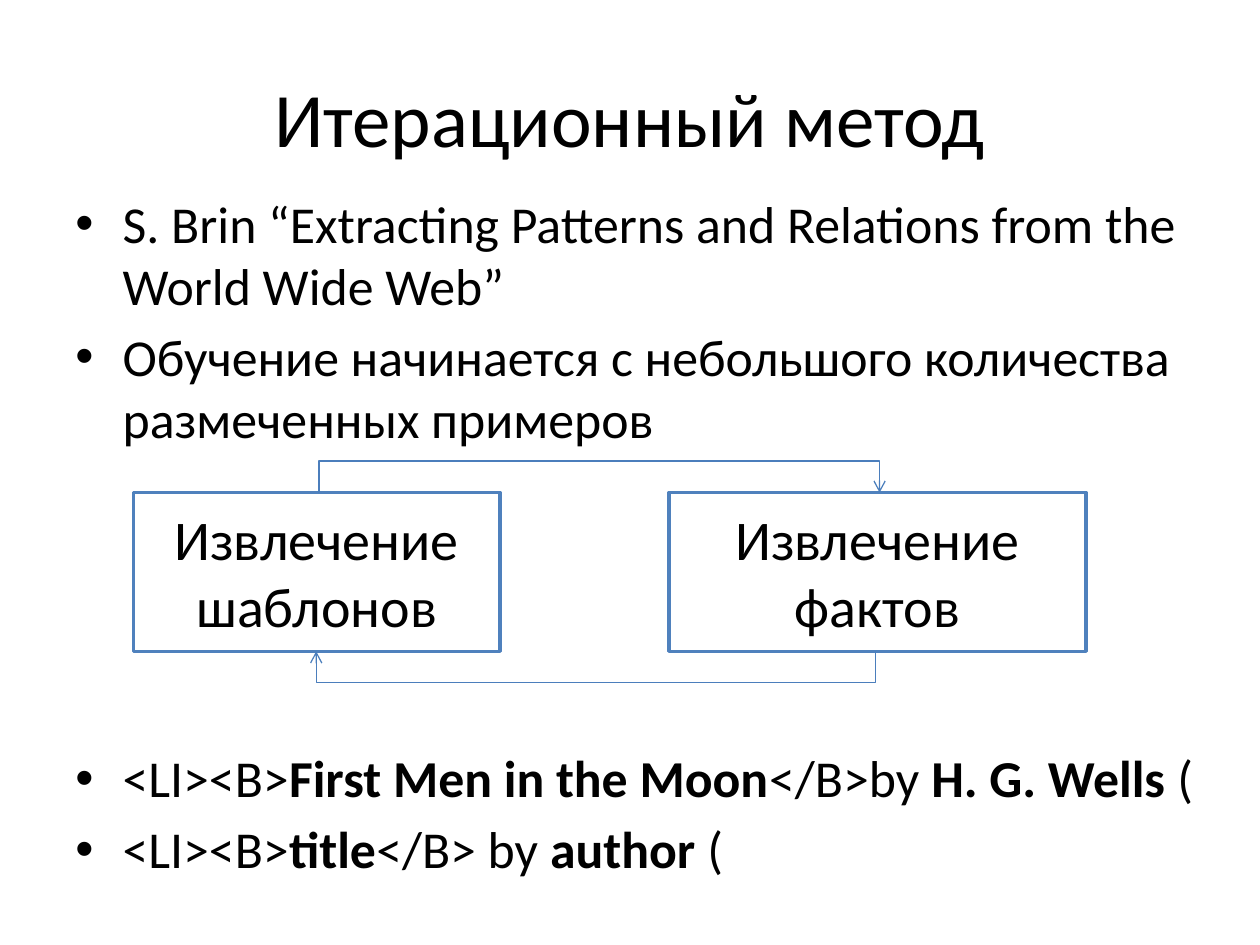
from lxml import etree
from pptx import Presentation
from pptx.dml.color import RGBColor
from pptx.enum import shapes, text
from pptx.oxml import ns
from pptx.util import Pt

# Content: a bullet is (space before, runs); a run is (text, bold)
TITLE = "Итерационный метод"
BULLETS = [
    (5, [("S. Brin “Extracting Patterns and Relations from the World Wide Web”", False)]),
    (5, [("Обучение начинается с небольшого количества размеченных примеров", False)]),
    (170, [("<LI><B>", False), ("First Men in the Moon", True), ("</B>by ", False),
           ("H. G. Wells ", True), ("(", False)]),
    (5, [("<LI><B>", False), ("title", True), ("</B> by ", False),
         ("author", True), (" (", False)]),
]
TOP, HIGH, RISE = 281.5, 90.7, 18
STEPS = [("Извлечение шаблонов", 76.3, 209.5), ("Извлечение фактов", 382.3, 238.3)]
# Loop arrows: start x, end x, box edge, level of the long run
LOOPS = [(182.2, 502.6, TOP, TOP - RISE),
         (500.4, 180.7, TOP + HIGH, TOP + HIGH + RISE)]
INK, PAPER, EDGE, WIRE = "000000", "FFFFFF", "4F81BD", "4B7EBC"


def tint(code):
    return RGBColor.from_string(code)


def put(obj, **vals):
    for name, val in vals.items():
        setattr(obj, name, val)


def write(para, words, size, bold=False):
    run = para.add_run()
    run.text = words
    put(run.font, name="Calibri", size=Pt(size), bold=bold)
    run.font.color.rgb = tint(INK)


def stroke(shape, code, width):
    shape.shadow.inherit = False
    shape.line.color.rgb = tint(code)
    shape.line.width = Pt(width)


def center(shape, words, size):
    frame = shape.text_frame
    put(frame, word_wrap=True, vertical_anchor=text.MSO_ANCHOR.MIDDLE)
    para = frame.paragraphs[0]
    para.alignment = text.PP_ALIGN.CENTER
    write(para, words, size)


deck = Presentation()
put(deck, slide_width=Pt(720), slide_height=Pt(540))
parts = deck.slides.add_slide(deck.slide_layouts[6]).shapes

# Title
center(parts.add_textbox(Pt(36), Pt(21.6), Pt(648), Pt(90)), TITLE, 44)

# Bullets
frame = parts.add_textbox(Pt(36), Pt(105.8), Pt(664), Pt(391)).text_frame
frame.word_wrap = True
for i, (gap, runs) in enumerate(BULLETS):
    para = frame.add_paragraph() if i else frame.paragraphs[0]
    para.space_before = Pt(gap)
    props = para._p.get_or_add_pPr()
    props.set("marL", str(Pt(27)))
    props.set("indent", str(-Pt(27)))
    etree.SubElement(props, ns.qn("a:buFont"), typeface="Arial")
    etree.SubElement(props, ns.qn("a:buChar"), char="•")
    for words, bold in runs:
        write(para, words, 29.6, bold)

# Step boxes
for words, left, wide in STEPS:
    box = parts.add_shape(shapes.MSO_SHAPE.RECTANGLE, Pt(left), Pt(TOP), Pt(wide), Pt(HIGH))
    box.fill.solid()
    box.fill.fore_color.rgb = tint(PAPER)
    stroke(box, EDGE, 2)
    center(box, words, 32)

# Loop arrows
for start, end, edge, level in LOOPS:
    pen = parts.build_freeform(Pt(start), Pt(edge))
    bends = [(start, level), (end, level), (end, edge)]
    pen.add_line_segments([(Pt(x), Pt(y)) for x, y in bends], close=False)
    loop = pen.convert_to_shape()
    loop.fill.background()
    stroke(loop, WIRE, 0.75)
    etree.SubElement(loop.line._get_or_add_ln(), ns.qn("a:tailEnd"), type="arrow")

deck.save("out.pptx")
